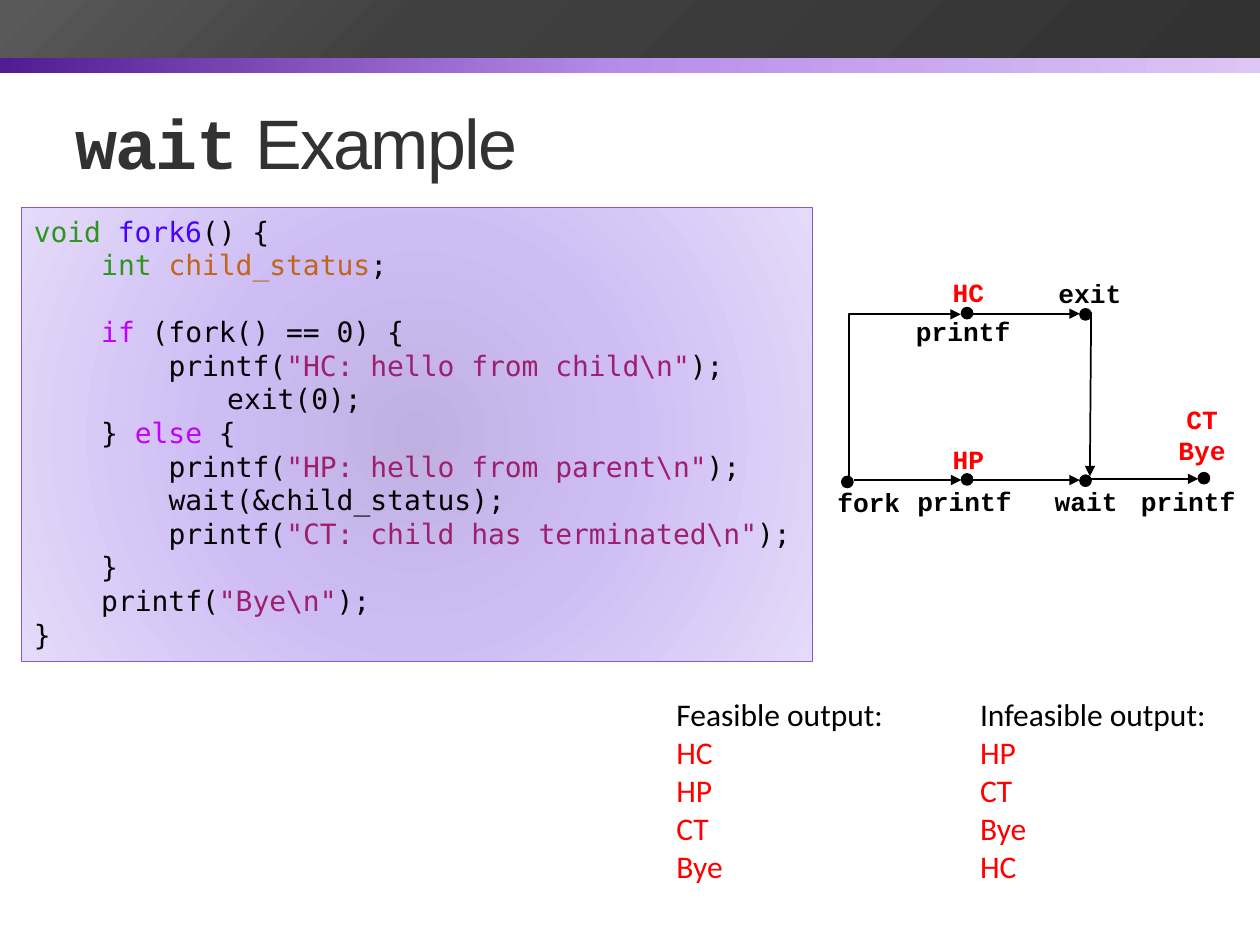
from dataclasses import dataclass

from lxml.etree import SubElement
from pptx import Presentation
from pptx.dml.color import RGBColor
from pptx.enum.shapes import MSO_CONNECTOR as Link, MSO_SHAPE as Shape
from pptx.enum.text import MSO_ANCHOR as Anchor, PP_ALIGN as Align
from pptx.oxml import parse_xml
from pptx.oxml.ns import nsdecls, qn
from pptx.util import Inches, Pt


@dataclass(frozen=True)
class Theme:
    """Colours, fonts and type sizes."""
    ink: str = "000000"
    heading: str = "323232"
    output: str = "FF0000"
    kind: str = "2D961E"
    function: str = "4A00FF"
    variable: str = "C1651C"
    keyword: str = "C200FF"
    literal: str = "9D206F"
    border: str = "8B58D2"
    sans: str = "Arial"
    body: str = "Calibri"
    mono: str = "Courier New"
    code: str = "DejaVu Sans Mono"
    title_size: int = 40
    code_size: int = 16
    label_size: int = 15
    body_size: int = 18


@dataclass(frozen=True)
class CodeLine:
    """A line of code: its indent in inches and its coloured pieces."""
    indent: float
    pieces: tuple
    space_before: float = 0


@dataclass(frozen=True)
class Label:
    """Centred text of the process graph."""
    lines: tuple
    box: tuple
    color: str = Theme.ink
    wrap: bool = True


@dataclass(frozen=True)
class OutputList:
    """A heading and the lines that are printed in order."""
    heading: str
    lines: tuple
    box: tuple


T = Theme()
DOT = 0.09
TAB = 0.535

BANDS = (
    ((0, 0.24, 10, 0.34), ((0, "521B92"), (50, "B88DEA"), (100, "DCC6F4")), 0),
    ((0, 0, 10, 0.46), ((0, "323232"), (66, "404040"), (99, "595959")), 225),
)
CODE_STOPS = ((0, "C0B0E2"), (45, "CEBDF4"), (100, "E4DAF9"))


def printf(message: str) -> tuple:
    """Return the coloured pieces of a printf call."""
    return ("printf(", T.ink), (f'"{message}\\n"', T.literal), (");", T.ink)


CODE = (
    CodeLine(0, (("void ", T.kind), ("fork6", T.function), ("() {", T.ink))),
    CodeLine(TAB, (("int ", T.kind), ("child_status", T.variable), (";", T.ink))),
    CodeLine(TAB, (("if", T.keyword), (" (fork() == 0) {", T.ink)), 19.2),
    CodeLine(2 * TAB, printf("HC: hello from child")),
    CodeLine(1 + TAB, (("exit(0);", T.ink),)),
    CodeLine(TAB, (("} ", T.ink), ("else", T.keyword), (" {", T.ink))),
    CodeLine(2 * TAB, printf("HP: hello from parent")),
    CodeLine(2 * TAB, (("wait(&child_status);", T.ink),)),
    CodeLine(2 * TAB, printf("CT: child has terminated")),
    CodeLine(TAB, (("}", T.ink),)),
    CodeLine(TAB, printf("Bye")),
    CodeLine(0, (("}", T.ink),)),
)
EVENTS = ((6.68, 3.78), (7.63, 3.76), (8.57, 3.77), (9.51, 3.75), (7.63, 2.44), (8.57, 2.45))
ARROWS = (
    ((6.78, 3.81), (7.63, 3.81)),
    ((7.72, 3.81), (8.57, 3.81)),
    ((8.66, 3.8), (9.51, 3.8)),
    ((7.72, 2.49), (8.57, 2.49)),
    ((8.66, 2.48), (8.65, 3.78)),
)
LABELS = (
    Label(("fork",), (6.49, 3.81, 0.81, 0.35)),
    Label(("printf",), (7.17, 3.8, 0.97, 0.35)),
    Label(("wait",), (8.14, 3.8, 0.96, 0.35)),
    Label(("printf",), (8.95, 3.8, 0.96, 0.35)),
    Label(("printf",), (7.13, 2.45, 1.03, 0.35)),
    Label(("exit",), (8.17, 2.15, 0.96, 0.35)),
    Label(("HP",), (7.46, 3.47, 0.45, 0.35), T.output, False),
    Label(("HC",), (7.46, 2.14, 0.45, 0.35), T.output, False),
    Label(("CT", "Bye"), (9.25, 3.15, 0.58, 0.61), T.output, False),
)
OUTPUTS = (
    OutputList("Feasible output:", ("HC", "HP", "CT", "Bye"), (5.27, 5.47, 1.9, 1.62)),
    OutputList("Infeasible output:", ("HP", "CT", "Bye", "HC"), (7.68, 5.47, 2.07, 1.62)),
)


def style(font, face: str, size: float, color: str, bold: bool = False) -> None:
    """Set face, size, colour and weight of a font."""
    font.name, font.size, font.bold = face, Pt(size), bold
    font.color.rgb = RGBColor.from_string(color)


def add_panel(slide, box: tuple, stops: tuple, angle: int | None = None):
    """Add a rectangle with a linear gradient, or a radial one without an angle."""
    panel = slide.shapes.add_shape(Shape.RECTANGLE, *map(Inches, box))
    panel.shadow.inherit = False
    panel.line.fill.background()
    colors = "".join(f'<a:gs pos="{at * 1000}"><a:srgbClr val="{color}"/></a:gs>' for at, color in stops)
    radial = '<a:path path="circle"><a:fillToRect l="50000" t="50000" r="50000" b="50000"/></a:path>'
    course = radial if angle is None else f'<a:lin ang="{angle * 60000}" scaled="0"/>'
    gradient = f'<a:gradFill {nsdecls("a")} rotWithShape="1"><a:gsLst>{colors}</a:gsLst>{course}</a:gradFill>'
    panel.element.spPr.find(qn("a:prstGeom")).addnext(parse_xml(gradient))
    return panel


def add_title(slide) -> None:
    """Add the slide title."""
    frame = slide.shapes.add_textbox(*map(Inches, (0.5, 0.58, 9, 1.08))).text_frame
    frame.word_wrap, frame.vertical_anchor = True, Anchor.MIDDLE
    for words, face, bold in (("wait", T.mono, True), (" Example", T.sans, False)):
        run = frame.paragraphs[0].add_run()
        run.text = words
        style(run.font, face, T.title_size, T.heading, bold)
        run.font._element.set("spc", "-100")


def add_code(slide) -> None:
    """Add the code panel with its coloured listing."""
    panel = add_panel(slide, (0.17, 1.65, 6.28, 3.6), CODE_STOPS)
    panel.line.color.rgb = RGBColor.from_string(T.border)
    panel.line.width = Pt(0.75)
    frame = panel.text_frame
    frame.word_wrap, frame.vertical_anchor = False, Anchor.TOP
    for number, line in enumerate(CODE):
        paragraph = frame.add_paragraph() if number else frame.paragraphs[0]
        paragraph.alignment = Align.LEFT
        paragraph.space_before = Pt(line.space_before)
        paragraph._p.get_or_add_pPr().set("marL", str(Inches(line.indent)))
        for words, color in line.pieces:
            run = paragraph.add_run()
            run.text = words
            style(run.font, T.code, T.code_size, color)


def add_arrow(slide, start: tuple, end: tuple, kind=Link.STRAIGHT):
    """Add a connector with a triangle at its end."""
    arrow = slide.shapes.add_connector(kind, *map(Inches, start + end))
    arrow.line.color.rgb = RGBColor.from_string(T.ink)
    arrow.line.width = Pt(1)
    SubElement(arrow.line._get_or_add_ln(), qn("a:tailEnd"), type="triangle")
    SubElement(arrow._element.spPr, qn("a:effectLst"))
    return arrow


def add_fork_branch(slide) -> None:
    """Add the bent arrow from fork up to the child."""
    properties = add_arrow(slide, (7.82, 3.58), (6.54, 2.69), Link.ELBOW)._element.spPr
    properties.find(qn("a:xfrm")).set("rot", str(90 * 60000))
    properties.find(qn("a:prstGeom")).set("prst", "bentConnector2")


def add_event(slide, left: float, top: float) -> None:
    """Add the dot of one event."""
    dot = slide.shapes.add_shape(Shape.OVAL, *map(Inches, (left, top, DOT, DOT)))
    dot.shadow.inherit = False
    dot.fill.solid()
    dot.fill.fore_color.rgb = dot.line.color.rgb = RGBColor.from_string(T.ink)
    dot.line.width = Pt(0.75)


def add_lines(slide, box: tuple, lines: tuple, wrap: bool = False) -> list:
    """Add a text box with one paragraph a line and return the paragraphs."""
    frame = slide.shapes.add_textbox(*map(Inches, box)).text_frame
    frame.text, frame.word_wrap = "\n".join(lines), wrap
    return list(frame.paragraphs)


def add_label(slide, label: Label) -> None:
    """Add one label of the process graph."""
    for paragraph in add_lines(slide, label.box, label.lines, label.wrap):
        paragraph.alignment = Align.CENTER
        style(paragraph.font, T.mono, T.label_size, label.color, True)


def add_output(slide, output: OutputList) -> None:
    """Add one list of printed lines under its heading."""
    heading, *printed = add_lines(slide, output.box, (output.heading, *output.lines))
    style(heading.font, T.body, T.body_size, T.ink)
    for paragraph in printed:
        style(paragraph.font, T.body, T.body_size, T.output)


def main() -> None:
    """Build and save the slide."""
    deck = Presentation()
    deck.slide_width, deck.slide_height = Inches(10), Inches(7.5)
    slide = deck.slides.add_slide(deck.slide_layouts[6])
    for band in BANDS:
        add_panel(slide, *band)
    add_title(slide)
    add_code(slide)
    for event in EVENTS:
        add_event(slide, *event)
    for arrow in ARROWS:
        add_arrow(slide, *arrow)
    add_fork_branch(slide)
    for label in LABELS:
        add_label(slide, label)
    for output in OUTPUTS:
        add_output(slide, output)
    deck.save("out.pptx")


if __name__ == "__main__":
    main()
